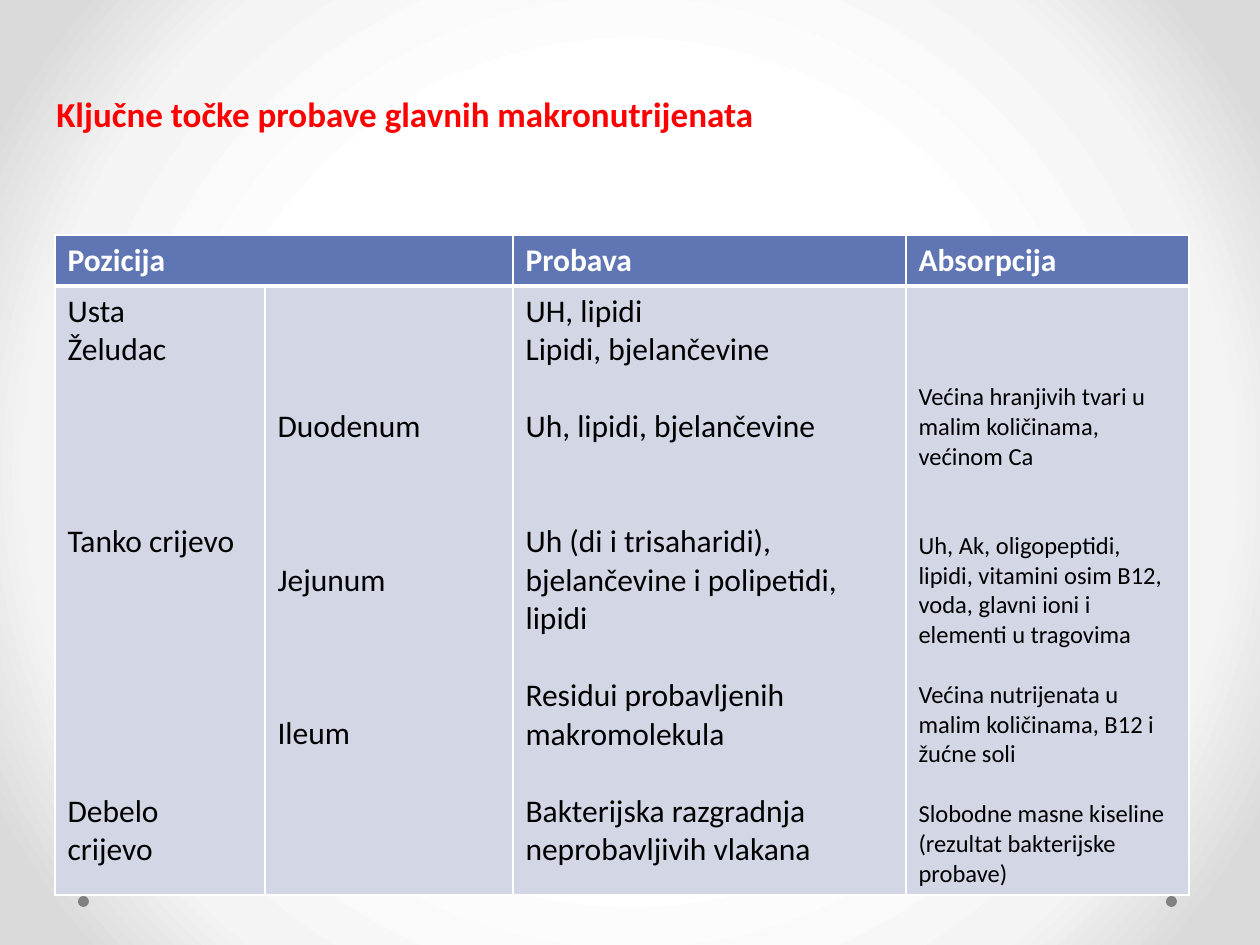
from dataclasses import dataclass

from pptx import Presentation
from pptx.dml.color import RGBColor
from pptx.enum.shapes import MSO_SHAPE
from pptx.oxml import parse_xml
from pptx.oxml.ns import nsdecls, qn
from pptx.slide import Slide
from pptx.table import _Cell
from pptx.text.text import _Paragraph
from pptx.util import Emu, Pt

EMU_PER_PX = 914400 / 126
COLORS = {
    "white": "FFFFFF",
    "pale": "F4F4F4",
    "gray": "DADADA",
    "dot": "808080",
    "title": "FF0000",
    "header": "6076B4",
    "body": "D2D6E5",
    "text": "000000",
}
GRADIENT_STOPS = [(50, "white"), (76, "pale"), (92, "gray")]
LINE_HEIGHTS = {18: 22, 14: 17}
CELL_MARGIN = 6


@dataclass(frozen=True)
class Entry:
    text: str
    lines_before: int = 0


@dataclass(frozen=True)
class Column:
    width: int
    header: str
    size: int
    entries: list[Entry]
    top_margin: int = CELL_MARGIN


@dataclass(frozen=True)
class Dot:
    left: int
    top: int = 896
    diameter: int = 11


DOTS = [Dot(1166), Dot(78)]
COLUMNS = [
    Column(210, "Pozicija", 18, [
        Entry("Usta"),
        Entry("Želudac"),
        Entry("Tanko crijevo", 4),
        Entry("Debelo", 6),
        Entry("crijevo"),
    ]),
    Column(248, "", 18, [
        Entry("Duodenum"),
        Entry("Jejunum", 3),
        Entry("Ileum", 3),
    ], top_margin=121),
    Column(393, "Probava", 18, [
        Entry("UH, lipidi"),
        Entry("Lipidi, bjelančevine"),
        Entry("Uh, lipidi, bjelančevine", 1),
        Entry("Uh (di i trisaharidi), bjelančevine i polipetidi, lipidi", 2),
        Entry("Residui probavljenih makromolekula", 1),
        Entry("Bakterijska razgradnja neprobavljivih vlakana", 1),
    ]),
    Column(283, "Absorpcija", 14, [
        Entry("Većina hranjivih tvari u malim količinama, većinom Ca"),
        Entry("Uh, Ak, oligopeptidi, lipidi, vitamini osim B12, voda, glavni ioni i elementi u tragovima", 2),
        Entry("Većina nutrijenata u malim količinama, B12 i žućne soli", 1),
        Entry("Slobodne masne kiseline (rezultat bakterijske probave)", 1),
    ], top_margin=96),
]


def px(length: int) -> Emu:
    return Emu(round(length * EMU_PER_PX))


def color(name: str) -> RGBColor:
    return RGBColor.from_string(COLORS[name])


def set_font(paragraph: _Paragraph, size: int, color_name: str, bold: bool) -> None:
    font = paragraph.font
    font.name = "Calibri"
    font.size = Pt(size)
    font.bold = bold
    font.color.rgb = color(color_name)


def set_background(slide: Slide) -> None:
    slide.background.fill.gradient()
    gradient = slide.element.find(f".//{qn('a:gradFill')}")
    stops = "".join(
        f'<a:gs pos="{position * 1000}"><a:srgbClr val="{COLORS[name]}"/></a:gs>'
        for position, name in GRADIENT_STOPS
    )
    radial = parse_xml(
        f'<a:gradFill {nsdecls("a")} rotWithShape="1"><a:gsLst>{stops}</a:gsLst>'
        '<a:path path="circle"><a:fillToRect l="50000" t="50000" r="50000" b="50000"/>'
        "</a:path></a:gradFill>"
    )
    gradient.getparent().replace(gradient, radial)


def add_dot(slide: Slide, dot: Dot) -> None:
    shape = slide.shapes.add_shape(
        MSO_SHAPE.OVAL, px(dot.left), px(dot.top), px(dot.diameter), px(dot.diameter)
    )
    shape.shadow.inherit = False
    shape.fill.solid()
    shape.fill.fore_color.rgb = color("dot")
    shape.line.fill.background()


def style_cell(cell: _Cell, fill_name: str, top: int, bottom: int) -> None:
    cell.fill.solid()
    cell.fill.fore_color.rgb = color(fill_name)
    properties = cell._tc.get_or_add_tcPr()
    widths = {"lnL": 1, "lnR": 1, "lnT": top, "lnB": bottom}
    for index, (tag, width) in enumerate(widths.items()):
        border = parse_xml(
            f'<a:{tag} {nsdecls("a")} w="{Pt(width)}"><a:solidFill>'
            f'<a:srgbClr val="{COLORS["white"]}"/></a:solidFill></a:{tag}>'
        )
        properties.insert(index, border)


def fill_body(cell: _Cell, column: Column) -> None:
    cell.margin_top = px(column.top_margin)
    frame = cell.text_frame
    for index, entry in enumerate(column.entries):
        paragraph = frame.add_paragraph() if index else frame.paragraphs[0]
        paragraph.text = entry.text
        paragraph.space_before = Pt(entry.lines_before * LINE_HEIGHTS[column.size])
        set_font(paragraph, column.size, "text", False)


def add_digestion_table(slide: Slide) -> None:
    width = sum(column.width for column in COLUMNS)
    table = slide.shapes.add_table(
        2, len(COLUMNS), px(55), px(235), px(width), px(660)
    ).table
    table.rows[0].height = px(51)
    table.rows[1].height = px(609)
    for index, column in enumerate(COLUMNS):
        table.columns[index].width = px(column.width)
        header, body = table.cell(0, index), table.cell(1, index)
        style_cell(header, "header", 1, 3)
        style_cell(body, "body", 3, 1)
        header.text = column.header
        set_font(header.text_frame.paragraphs[0], 18, "white", True)
        fill_body(body, column)
    table.cell(0, 0).merge(table.cell(0, 1))


def add_title(slide: Slide) -> None:
    frame = slide.shapes.add_textbox(px(44), px(86), px(1131), px(55)).text_frame
    frame.word_wrap = True
    paragraph = frame.paragraphs[0]
    paragraph.text = "Ključne točke probave glavnih makronutrijenata"
    set_font(paragraph, 20, "title", True)


def main() -> None:
    """Build the slide on digestion of the main macronutrients."""
    presentation = Presentation()
    presentation.slide_width, presentation.slide_height = px(1260), px(945)
    slide = presentation.slides.add_slide(presentation.slide_layouts[6])
    set_background(slide)
    for dot in DOTS:
        add_dot(slide, dot)
    add_digestion_table(slide)
    add_title(slide)
    presentation.save("out.pptx")


if __name__ == "__main__":
    main()
